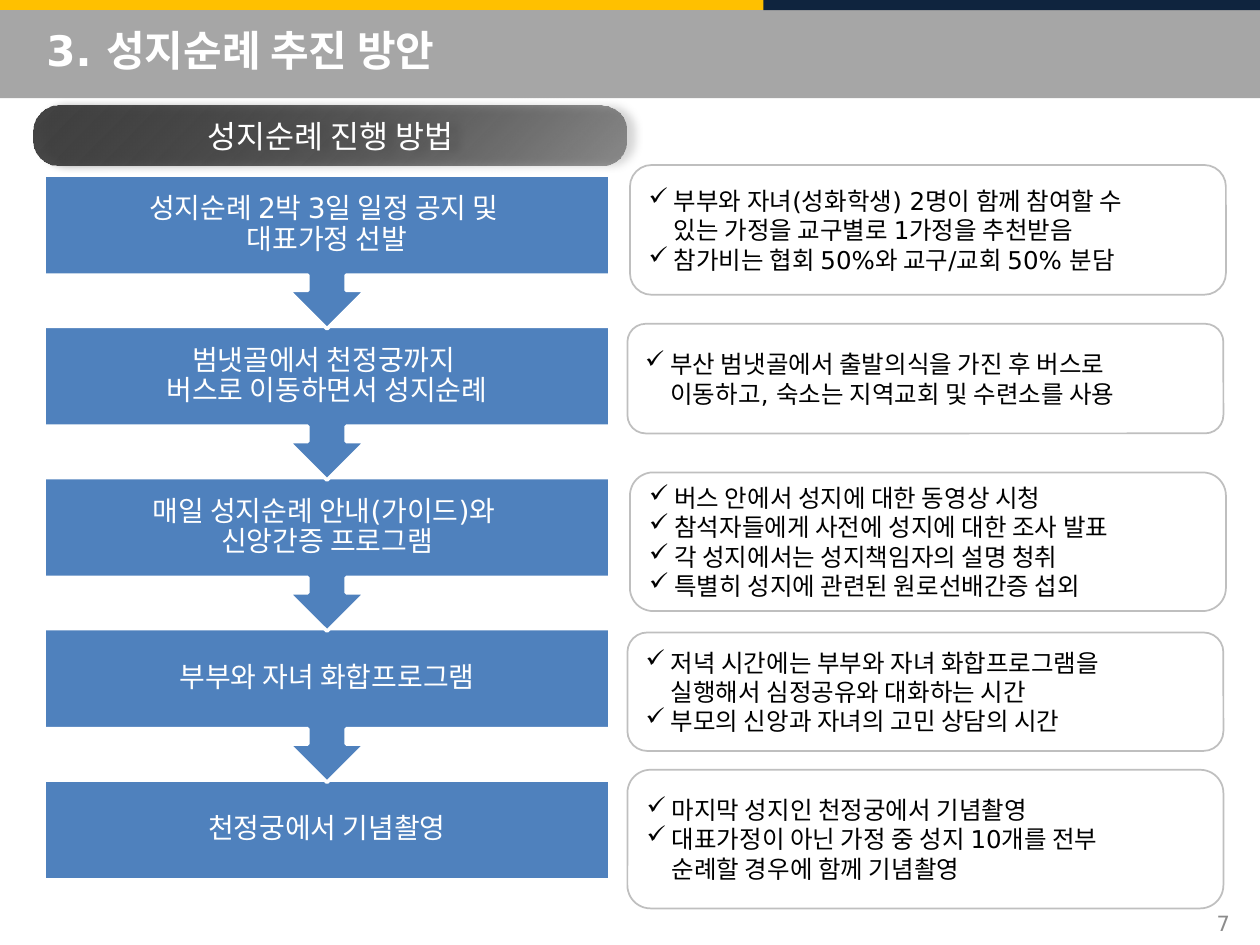
from lxml.etree import SubElement
from pptx import Presentation
from pptx.dml.color import RGBColor
from pptx.enum.shapes import MSO_SHAPE
from pptx.enum.text import MSO_ANCHOR, PP_ALIGN
from pptx.oxml.ns import qn
from pptx.util import Inches, Pt

FONT = "DejaVu Sans"
WHITE = RGBColor(0xFF, 0xFF, 0xFF)
BLACK = RGBColor(0x00, 0x00, 0x00)
GOLD = RGBColor(0xFF, 0xC0, 0x00)
NAVY = RGBColor(0x0F, 0x24, 0x3E)
BAND_GRAY = RGBColor(0xA6, 0xA6, 0xA6)
BORDER_GRAY = RGBColor(0xBF, 0xBF, 0xBF)
NUMBER_GRAY = RGBColor(0x8C, 0x8C, 0x8C)
DARK = RGBColor(0x40, 0x40, 0x40)
NEAR_BLACK = RGBColor(0x0D, 0x0D, 0x0D)
BLUE = RGBColor(0x4F, 0x81, 0xBD)

STEP_LEFT, STEP_TOP, STEP_WIDTH = 0.35, 1.39, 4.49
STEP_PITCH, BODY_HEIGHT, CALLOUT_HEIGHT = 1.2, 0.79, 1.22
NOTE_WIDTH = 4.73

STEPS = [
    "성지순례 2박 3일 일정 공지 및 \n대표가정 선발",
    "범냇골에서 천정궁까지 \n버스로 이동하면서 성지순례",
    "매일 성지순례 안내(가이드)와 \n신앙간증 프로그램",
    "부부와 자녀 화합프로그램",
    "천정궁에서 기념촬영",
]

NOTES = [
    (5, 1.31, 1.03, [
        "부부와 자녀(성화학생) 2명이 함께 참여할 수 \n있는 가정을 교구별로 1가정을 추천받음",
        "참가비는 협회 50%와 교구/교회 50% 분담",
    ]),
    (4.98, 2.57, 0.87, [
        "부산 범냇골에서 출발의식을 가진 후 버스로 \n이동하고, 숙소는 지역교회 및 수련소를 사용",
    ]),
    (5, 3.75, 1.1, [
        "버스 안에서 성지에 대한 동영상 시청",
        "참석자들에게 사전에 성지에 대한 조사 발표",
        "각 성지에서는 성지책임자의 설명 청취",
        "특별히 성지에 관련된 원로선배간증 섭외",
    ]),
    (4.98, 5.02, 0.94, [
        "저녁 시간에는 부부와 자녀 화합프로그램을 \n실행해서 심정공유와 대화하는 시간",
        "부모의 신앙과 자녀의 고민 상담의 시간",
    ]),
    (4.98, 6.11, 1.1, [
        "마지막 성지인 천정궁에서 기념촬영",
        "대표가정이 아닌 가정 중 성지 10개를 전부 \n순례할 경우에 함께 기념촬영",
    ]),
]


def add_shape(s, kind, left, top, width, height, fill=None, line=None, line_width=1):
    sp = s.shapes.add_shape(kind, Inches(left), Inches(top), Inches(width), Inches(height))
    sp.shadow.inherit = False
    if fill is None:
        sp.fill.background()
    else:
        sp.fill.solid()
        sp.fill.fore_color.rgb = fill
    if line is None:
        sp.line.fill.background()
    else:
        sp.line.color.rgb = line
        sp.line.width = Pt(line_width)
    return sp


def add_textbox(s, left, top, width, height):
    return s.shapes.add_textbox(Inches(left), Inches(top), Inches(width), Inches(height))


def add_check(p):
    pPr = p._p.get_or_add_pPr()
    pPr.set("marL", str(Inches(0.2)))
    pPr.set("indent", str(-Inches(0.2)))
    SubElement(pPr, qn("a:buChar"), char="✓")


def write_text(sp, *texts, size, color, bold=False, align=PP_ALIGN.LEFT,
               spacing=None, margin=None, check=False):
    tf = sp.text_frame
    tf.word_wrap = True
    tf.vertical_anchor = MSO_ANCHOR.MIDDLE
    if margin is not None:
        tf.margin_left = tf.margin_right = Inches(margin)
        tf.margin_top = tf.margin_bottom = Inches(margin)
    for i, text in enumerate(texts):
        p = tf.add_paragraph() if i else tf.paragraphs[0]
        p.text = text
        p.alignment = align
        if spacing is not None:
            p.line_spacing = spacing
        if check:
            add_check(p)
        for r in p.runs:
            r.font.name = FONT
            r.font.size = Pt(size)
            r.font.bold = bold
            r.font.color.rgb = color


def add_header(s):
    add_shape(s, MSO_SHAPE.RECTANGLE, 0, 0, 10, 0.08, GOLD)
    add_shape(s, MSO_SHAPE.RECTANGLE, 0, 0.08, 10, 0.7, BAND_GRAY)
    add_shape(s, MSO_SHAPE.RECTANGLE, 6.06, 0, 3.94, 0.08, NAVY)
    title = add_textbox(s, 0.27, 0.08, 9.27, 0.63)
    write_text(title, "3. 성지순례 추진 방안", size=24, color=WHITE, bold=True)


def add_alpha(color_element, percent):
    SubElement(color_element, qn("a:alpha"), val=str(percent * 1000))


def add_section_pill(s, text):
    sp = add_shape(s, MSO_SHAPE.ROUNDED_RECTANGLE, 0.27, 0.84, 4.7, 0.47)
    sp.adjustments[0] = 0.42
    sp.fill.gradient()
    sp.fill.gradient_angle = 315
    for stop, color in zip(sp.fill.gradient_stops, (DARK, NEAR_BLACK)):
        stop.color.rgb = color
    spPr = sp._element.spPr
    add_alpha(spPr.findall(".//" + qn("a:gs"))[-1][0], 38)
    shadow = SubElement(spPr.find(qn("a:effectLst")), qn("a:outerShdw"),
                        blurRad=str(Pt(5)), dist=str(Pt(5)), dir="0",
                        algn="l", rotWithShape="0")
    add_alpha(SubElement(shadow, qn("a:srgbClr"), val=str(BLACK)), 40)
    write_text(sp, text, size=18, color=WHITE, align=PP_ALIGN.CENTER)


def add_step(s, index, text):
    top = STEP_TOP + index * STEP_PITCH
    if index == len(STEPS) - 1:
        add_shape(s, MSO_SHAPE.RECTANGLE, STEP_LEFT, top, STEP_WIDTH, BODY_HEIGHT,
                  BLUE, WHITE, 2)
    else:
        sp = add_shape(s, MSO_SHAPE.UP_ARROW_CALLOUT, STEP_LEFT, top, STEP_WIDTH,
                       CALLOUT_HEIGHT, BLUE, WHITE, 2)
        sp.rotation = 180
    label = add_textbox(s, STEP_LEFT, top, STEP_WIDTH, BODY_HEIGHT)
    write_text(label, text, size=16, color=WHITE, align=PP_ALIGN.CENTER,
               spacing=0.9, margin=0.12)


def add_note(s, left, top, height, items):
    sp = add_shape(s, MSO_SHAPE.ROUNDED_RECTANGLE, left, top, NOTE_WIDTH, height,
                   line=BORDER_GRAY)
    write_text(sp, *items, size=14, color=BLACK, check=True)


def main():
    prs = Presentation()
    prs.slide_width, prs.slide_height = Inches(10), Inches(7.5)
    s = prs.slides.add_slide(prs.slide_layouts[6])
    add_header(s)
    number = add_textbox(s, 7.53, 7.13, 2.33, 0.4)
    write_text(number, "7", size=12, color=NUMBER_GRAY, align=PP_ALIGN.RIGHT)
    add_section_pill(s, "성지순례 진행 방법")
    for index, text in reversed(list(enumerate(STEPS))):
        add_step(s, index, text)
    for note in NOTES:
        add_note(s, *note)
    prs.save("out.pptx")


if __name__ == "__main__":
    main()
